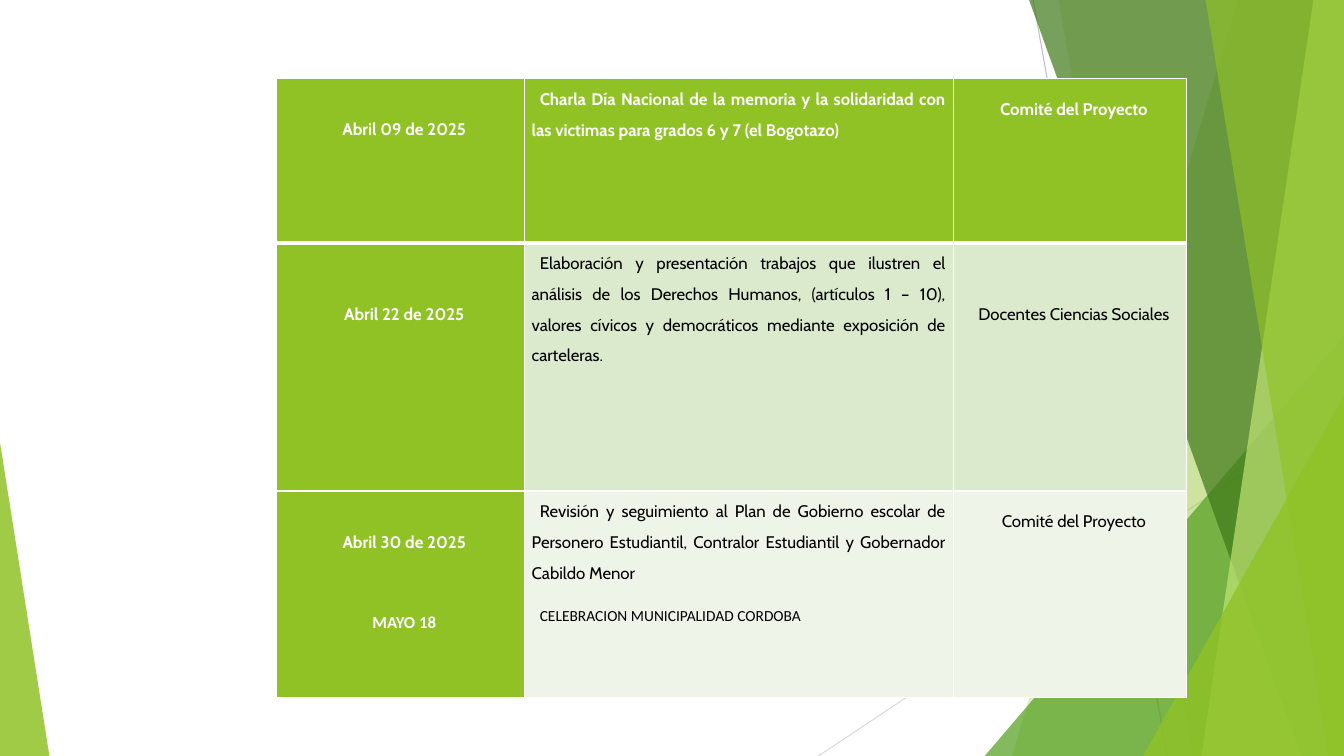
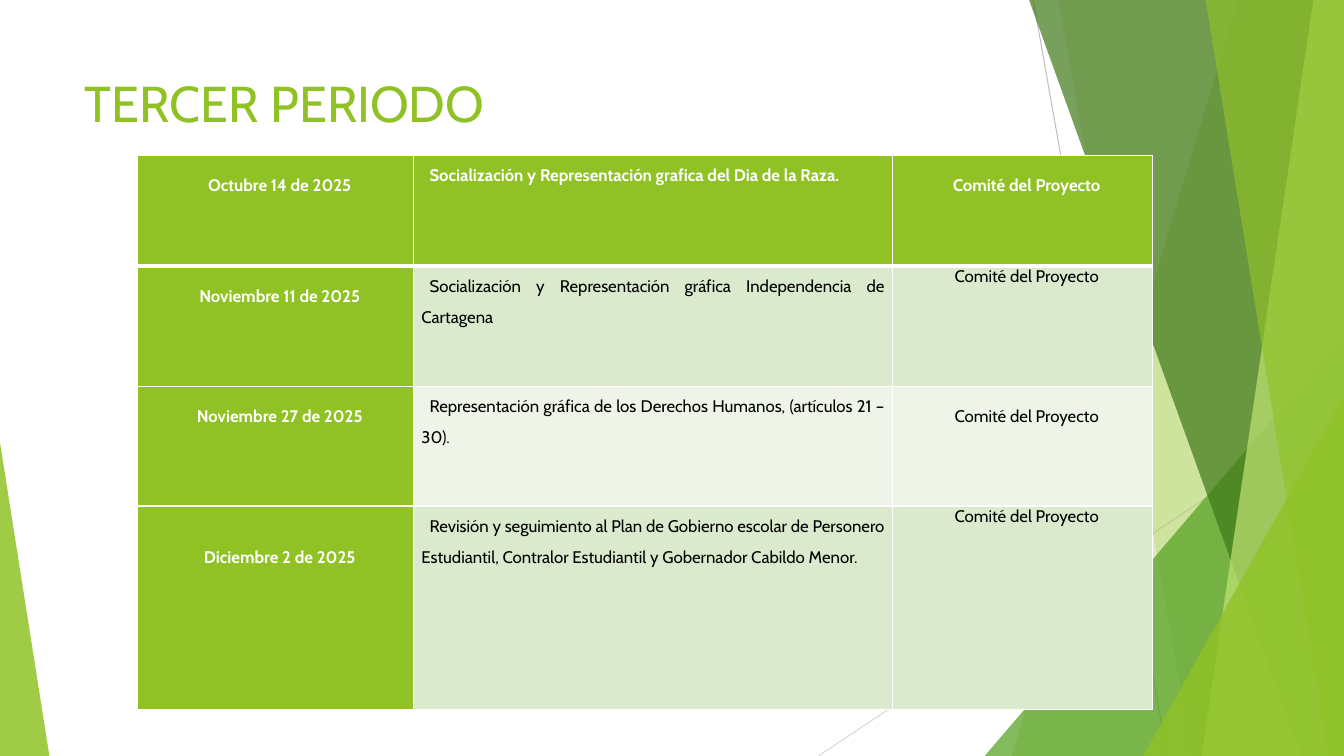
from lxml import etree
from pptx import Presentation
from pptx.dml.color import RGBColor
from pptx.enum.shapes import MSO_CONNECTOR, MSO_SHAPE
from pptx.enum.text import PP_ALIGN
from pptx.oxml.ns import qn
from pptx.util import Pt

STRAIGHT = MSO_CONNECTOR.STRAIGHT
TRIANGLE = MSO_SHAPE.ISOSCELES_TRIANGLE
CENTER, JUSTIFY = PP_ALIGN.CENTER, PP_ALIGN.JUSTIFY

GREEN = RGBColor(0x90, 0xC2, 0x26)
LEAF = RGBColor(0x54, 0xA0, 0x21)
FOREST = RGBColor(0x3F, 0x78, 0x19)
LIME = RGBColor(0xC0, 0xE4, 0x74)
BAND_DARK = RGBColor(0xDB, 0xE9, 0xCD)
BAND_LIGHT = RGBColor(0xEE, 0xF4, 0xE8)
GRAY = RGBColor(0xBF, 0xBF, 0xBF)
LIGHT_GRAY = RGBColor(0xD9, 0xD9, 0xD9)
WHITE = RGBColor(0xFF, 0xFF, 0xFF)
BLACK = RGBColor(0, 0, 0)

FONT, ADDED_FONT = "Cabin", "Calibri"
WIDTH, HEIGHT = 960, 540
LINE_HEIGHT = 14.6
ADDED_GAP = 43.3

RAYS = [
    (738, 0, 833.8, HEIGHT, GRAY),
    (WIDTH, 290.2, 584.6, HEIGHT, LIGHT_GRAY),
]

# Back to front. A band is (top x, bottom x) and runs to the right edge;
# a triangle is (left, top, width, apex) and stands on the bottom edge.
FACETS = [
    ((884.2, 722.9), GREEN, 30),
    ((756, 851.8), GREEN, 20),
    ((703.4, 239.8, 256.6, 1), LEAF, 72),
    ((735.1, 929.5), FOREST, 70),
    ((938.2, 858.2), LIME, 70),
    ((861.1, 949), GREEN, 65),
    ((816.5, 283, 143.5, 1), GREEN, 80),
    ((0, 316.1, 35.3, 0), GREEN, 85),
]

# Each row: height, date, lines above it, activity, people, lines above them.
COMMITTEE = "Comité del Proyecto"
SCHEDULES = [
    {
        "title": None, "left": 197.3, "top": 56.2, "columns": (177.1, 306.7, 166.3),
        "rows": [
            (117.4, "Abril 09 de 2025", 2,
             "Charla Día Nacional de la memoria y la solidaridad con las victimas "
             "para grados 6 y 7 (el Bogotazo)", COMMITTEE, 1),
            (177.1, "Abril 22 de 2025", 3,
             "Elaboración y presentación trabajos que ilustren el análisis de los "
             "Derechos Humanos, (artículos 1 – 10), valores cívicos y democráticos "
             "mediante exposición de carteleras.", "Docentes Ciencias Sociales", 3),
            (147.6, "Abril 30 de 2025\nMAYO 18", 2,
             "Revisión y seguimiento al Plan de Gobierno escolar de Personero "
             "Estudiantil, Contralor Estudiantil y Gobernador Cabildo Menor\n"
             "CELEBRACION MUNICIPALIDAD CORDOBA", COMMITTEE, 1),
        ],
    },
    {
        "title": "TERCER PERIODO", "left": 98.3, "top": 110.9, "columns": (197.3, 342, 185.8),
        "rows": [
            (79.2, "Octubre 14 de 2025", 1,
             "Socialización y Representación grafica del Dia de la Raza.", COMMITTEE, 1),
            (85.7, "Noviembre 11 de 2025", 1,
             "Socialización y Representación gráfica Independencia de Cartagena",
             COMMITTEE, 0),
            (85.7, "Noviembre 27 de 2025", 1,
             "Representación gráfica de los Derechos Humanos, (artículos 21 – 30).",
             COMMITTEE, 1),
            (145.4, "Diciembre 2 de 2025", 2,
             "Revisión y seguimiento al Plan de Gobierno escolar de Personero "
             "Estudiantil, Contralor Estudiantil y Gobernador Cabildo Menor.",
             COMMITTEE, 0),
        ],
    },
]


def draw_backdrop(shapes):
    for x1, y1, x2, y2, color in RAYS:
        ray = shapes.add_connector(STRAIGHT, Pt(x1), Pt(y1), Pt(x2), Pt(y2))
        ray.line.color.rgb = color
        ray.line.width = Pt(0.75)
        etree.SubElement(ray._element.spPr, qn("a:effectLst"))
    for geometry, color, opacity in FACETS:
        if len(geometry) == 2:
            top_x, bottom_x = geometry
            outline = shapes.build_freeform(Pt(top_x), 0)
            outline.add_line_segments(
                [(Pt(WIDTH), 0), (Pt(WIDTH), Pt(HEIGHT)), (Pt(bottom_x), Pt(HEIGHT))])
            facet = outline.convert_to_shape()
        else:
            left, top, width, apex = geometry
            facet = shapes.add_shape(TRIANGLE, Pt(left), Pt(top), Pt(width), Pt(HEIGHT - top))
            facet.adjustments[0] = apex
        facet.shadow.inherit = False
        facet.line.fill.background()
        facet.fill.solid()
        facet.fill.fore_color.rgb = color
        tint = facet._element.spPr.find(qn("a:solidFill"))[0]
        etree.SubElement(tint, qn("a:alpha"), val=str(opacity * 1000))


def set_borders(cell, top_width, bottom_width):
    properties = cell._tc.get_or_add_tcPr()
    for side, width in (("L", 1), ("R", 1), ("T", top_width), ("B", bottom_width)):
        border = etree.SubElement(properties, qn(f"a:ln{side}"), w=str(Pt(width)))
        paint = etree.SubElement(border, qn("a:solidFill"))
        etree.SubElement(paint, qn("a:srgbClr"), val=str(WHITE))


prs = Presentation()
prs.slide_width, prs.slide_height = Pt(WIDTH), Pt(HEIGHT)

for schedule in SCHEDULES:
    slide = prs.slides.add_slide(prs.slide_layouts[6])
    draw_backdrop(slide.shapes)

    if schedule["title"]:
        title = slide.shapes.add_textbox(Pt(53.3), Pt(48.2), Pt(676.8), Pt(103.7))
        title.text_frame.word_wrap = True
        title.text_frame.text = schedule["title"]
        title_font = title.text_frame.paragraphs[0].runs[0].font
        title_font.name, title_font.size = FONT, Pt(36)
        title_font.color.rgb = GREEN

    rows, columns = schedule["rows"], schedule["columns"]
    table = slide.shapes.add_table(
        len(rows), len(columns), Pt(schedule["left"]), Pt(schedule["top"]),
        Pt(sum(columns)), Pt(sum(row[0] for row in rows))).table
    table.horz_banding = False
    for column, width in zip(table.columns, columns):
        column.width = Pt(width)

    for r, (height, date, date_lead, activity, people, people_lead) in enumerate(rows):
        table.rows[r].height = Pt(height)
        entries = [(date, date_lead), (activity, 0), (people, people_lead)]
        for c, (text, lead) in enumerate(entries):
            cell = table.cell(r, c)
            is_heading = r == 0 or c == 0
            is_activity = c == 1
            set_borders(cell, 3 if r == 1 else 1, 3 if r == 0 else 1)
            cell.fill.solid()
            cell.fill.fore_color.rgb = (
                GREEN if is_heading else BAND_DARK if r % 2 else BAND_LIGHT)
            cell.margin_left = cell.margin_right = Pt(5.4)
            cell.margin_top, cell.margin_bottom = Pt(lead * LINE_HEIGHT), 0
            cell.text_frame.text = text
            for n, paragraph in enumerate(cell.text_frame.paragraphs):
                is_added = n > 0
                paragraph._p.get_or_add_pPr().set("indent", str(Pt(5.8)))
                paragraph.alignment = JUSTIFY if is_activity else CENTER
                if is_activity:
                    paragraph.line_spacing = 1.5
                    paragraph.space_after = Pt(10)
                elif is_added:
                    paragraph.space_before = Pt(ADDED_GAP)
                font = paragraph.runs[0].font
                font.name = ADDED_FONT if is_added else FONT
                font.size = Pt(11 if is_added and is_activity else 12)
                font.bold = is_heading
                font.color.rgb = WHITE if is_heading else BLACK

prs.save("out.pptx")
